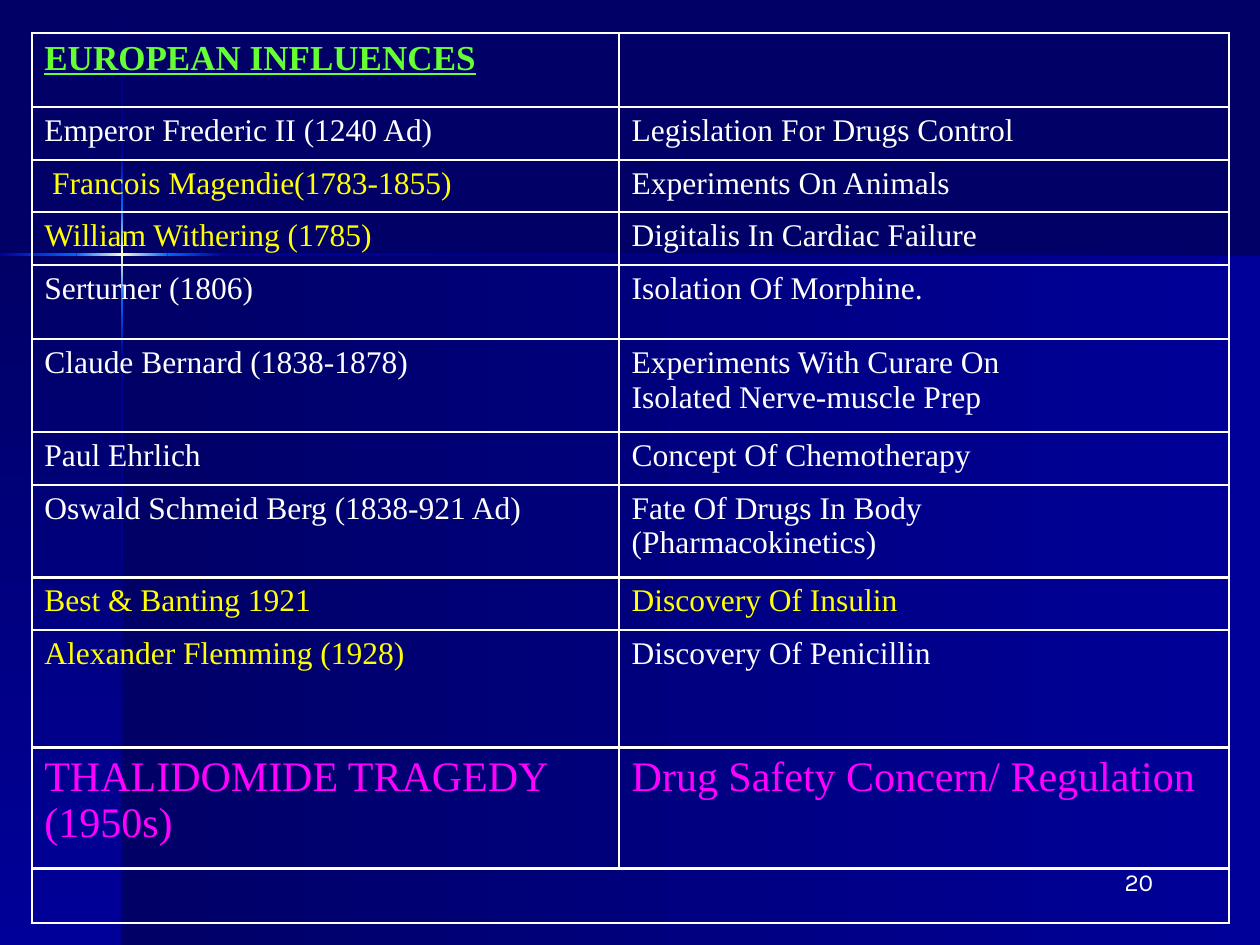
from dataclasses import dataclass
from itertools import pairwise

from lxml import etree
from pptx import Presentation
from pptx.dml.color import RGBColor
from pptx.enum.shapes import MSO_SHAPE
from pptx.enum.text import PP_ALIGN
from pptx.oxml.ns import qn
from pptx.slide import Slide
from pptx.table import _Cell
from pptx.text.text import TextFrame
from pptx.util import Cm, Pt

RECTANGLE = MSO_SHAPE.RECTANGLE
LEFT, RIGHT = PP_ALIGN.LEFT, PP_ALIGN.RIGHT


@dataclass(frozen=True)
class Theme:
    navy: str = "000066"
    blue: str = "000099"
    glow: str = "0066FF"
    spark: str = "FFFFCC"
    white: str = "FFFFFF"
    yellow: str = "FFFF00"
    green: str = "66FF33"
    magenta: str = "FF00FF"
    table_font: str = "Times New Roman"
    number_font: str = "Karla"
    heading_size: int = 20
    body_size: int = 18
    large_size: int = 24
    number_size: int = 14
    thick_line: float = 1.5
    thin_line: float = 1


THEME = Theme()


@dataclass(frozen=True)
class Band:
    """A gradient rectangle, measured in centimetres."""
    left: float
    top: float
    width: float
    height: float
    colors: tuple[str, ...]
    vertical: bool


@dataclass(frozen=True)
class Influence:
    """One table row; a line break in a text starts a new paragraph."""
    person: str
    work: str
    height: float = 1.06
    person_color: str = THEME.white
    work_color: str = THEME.white
    size: int = THEME.body_size
    heading: bool = False


SLIDE_WIDTH, SLIDE_HEIGHT = 25.4, 19.05
CROSS_X, CROSS_Y, BEAM_WIDTH = 2.46, 5.13, 0.05
PANEL_COLORS = (THEME.navy, THEME.blue)
BEAM_COLORS = (
    (THEME.navy, THEME.blue),
    (THEME.blue, THEME.glow),
    (THEME.glow, THEME.spark, THEME.glow),
    (THEME.glow, THEME.blue),
    (THEME.blue, THEME.navy),
)
VERTICAL_STOPS = (0.03, 3.07, 4.19, 6.05, 7.16, SLIDE_HEIGHT)
HORIZONTAL_STOPS = (0, 1.54, 3.38, 4.5, SLIDE_WIDTH)

COLUMN_WIDTHS = (11.84, 12.29)
INFLUENCES = (
    Influence("EUROPEAN INFLUENCES", "", 1.5, THEME.green,
              size=THEME.heading_size, heading=True),
    Influence("Emperor Frederic II (1240 Ad)", "Legislation For Drugs Control"),
    Influence(" Francois Magendie(1783-1855)", "Experiments On Animals",
              person_color=THEME.yellow),
    Influence("William Withering (1785)", "Digitalis In Cardiac Failure",
              person_color=THEME.yellow),
    Influence("Serturner (1806)", "Isolation Of Morphine.", 1.5),
    Influence("Claude Bernard (1838-1878)",
              "Experiments With Curare On\nIsolated Nerve-muscle Prep", 1.87),
    Influence("Paul Ehrlich", "Concept Of Chemotherapy"),
    Influence("Oswald Schmeid Berg (1838-921 Ad)",
              "Fate Of Drugs In Body\n(Pharmacokinetics)", 1.87),
    Influence("Best & Banting 1921", "Discovery Of Insulin",
              person_color=THEME.yellow, work_color=THEME.yellow),
    Influence("Alexander Flemming (1928)", "Discovery Of Penicillin", 2.37,
              person_color=THEME.yellow),
    Influence("THALIDOMIDE TRAGEDY (1950s)", "Drug Safety Concern/ Regulation",
              2.44, THEME.magenta, THEME.magenta, THEME.large_size),
    Influence("", "", 1.1),
)


def write_text(frame: TextFrame, text: str, *, size: int, color: str, font: str,
               bold: bool = False, underline: bool = False,
               align: PP_ALIGN = LEFT) -> None:
    frame.word_wrap = True
    for index, line in enumerate(text.split("\n")):
        paragraph = frame.add_paragraph() if index else frame.paragraphs[0]
        paragraph.alignment = align
        if not line:
            paragraph.font.size = Pt(size)
            continue
        run = paragraph.add_run()
        run.text = line
        run.font.name = font
        run.font.size = Pt(size)
        run.font.bold = bold
        run.font.underline = underline
        run.font.color.rgb = RGBColor.from_string(color)


def add_color(parent: etree._Element, color: str) -> None:
    etree.SubElement(parent, qn("a:srgbClr"), val=color)


def draw_band(slide: Slide, band: Band) -> None:
    shape = slide.shapes.add_shape(RECTANGLE, Cm(band.left), Cm(band.top),
                                   Cm(band.width), Cm(band.height))
    shape.shadow.inherit = False
    shape.line.fill.background()
    shape.fill.gradient()
    shape.fill.gradient_angle = 270 if band.vertical else 0
    stops = shape._element.spPr.find(".//" + qn("a:gsLst"))
    for stop in list(stops):
        stops.remove(stop)
    for index, color in enumerate(band.colors):
        position = 100000 * index // (len(band.colors) - 1)
        add_color(etree.SubElement(stops, qn("a:gs"), pos=str(position)), color)


def draw_backdrop(slide: Slide) -> None:
    """Two lower panels and a pair of beams crossing at their corner."""
    slide.background.fill.solid()
    slide.background.fill.fore_color.rgb = RGBColor.from_string(THEME.navy)
    panel_height = SLIDE_HEIGHT - CROSS_Y
    bands = [
        Band(CROSS_X, CROSS_Y, SLIDE_WIDTH - CROSS_X, panel_height, PANEL_COLORS, False),
        Band(0, CROSS_Y, CROSS_X, panel_height, PANEL_COLORS, True),
    ]
    half = BEAM_WIDTH / 2
    for (start, end), colors in zip(pairwise(VERTICAL_STOPS), BEAM_COLORS):
        bands.append(Band(CROSS_X - half, start, BEAM_WIDTH, end - start, colors, True))
    for (start, end), colors in zip(pairwise(HORIZONTAL_STOPS), BEAM_COLORS[1:]):
        bands.append(Band(start, CROSS_Y - half, end - start, BEAM_WIDTH, colors, False))
    for band in bands:
        draw_band(slide, band)


def set_borders(cell: _Cell, left: float, right: float) -> None:
    properties = cell._tc.get_or_add_tcPr()
    widths = {"a:lnL": left, "a:lnR": right,
              "a:lnT": THEME.thick_line, "a:lnB": THEME.thick_line}
    for tag, width in widths.items():
        line = etree.SubElement(properties, qn(tag), w=str(Pt(width)))
        add_color(etree.SubElement(line, qn("a:solidFill")), THEME.white)


def draw_table(slide: Slide) -> None:
    heights = [influence.height for influence in INFLUENCES]
    table = slide.shapes.add_table(
        len(INFLUENCES), len(COLUMN_WIDTHS), Cm(0.64), Cm(0.66),
        Cm(sum(COLUMN_WIDTHS)), Cm(sum(heights))).table
    table.first_row = table.horz_banding = False
    for column, width in zip(table.columns, COLUMN_WIDTHS):
        column.width = Cm(width)
    last = len(INFLUENCES) - 1
    table.cell(last, 0).merge(table.cell(last, 1))
    for index, influence in enumerate(INFLUENCES):
        table.rows[index].height = Cm(influence.height)
        inner = THEME.thick_line if index == last else THEME.thin_line
        entries = (
            (influence.person, influence.person_color, THEME.thick_line, inner),
            (influence.work, influence.work_color, inner, THEME.thick_line),
        )
        for cell, (text, color, left, right) in zip(table.rows[index].cells, entries):
            if not cell.is_spanned:
                set_borders(cell, left, right)
            cell.fill.background()
            write_text(cell.text_frame, text, size=influence.size, color=color,
                       font=THEME.table_font, bold=influence.heading,
                       underline=influence.heading)


def draw_slide_number(slide: Slide) -> None:
    box = slide.shapes.add_textbox(Cm(18.2), Cm(17.35), Cm(5.3), Cm(1.27))
    write_text(box.text_frame, "20", size=THEME.number_size, color=THEME.white,
               font=THEME.number_font, align=RIGHT)


def main() -> None:
    presentation = Presentation()
    presentation.slide_width = Cm(SLIDE_WIDTH)
    presentation.slide_height = Cm(SLIDE_HEIGHT)
    slide = presentation.slides.add_slide(presentation.slide_layouts[6])
    draw_backdrop(slide)
    draw_slide_number(slide)
    draw_table(slide)
    presentation.save("out.pptx")


if __name__ == "__main__":
    main()
